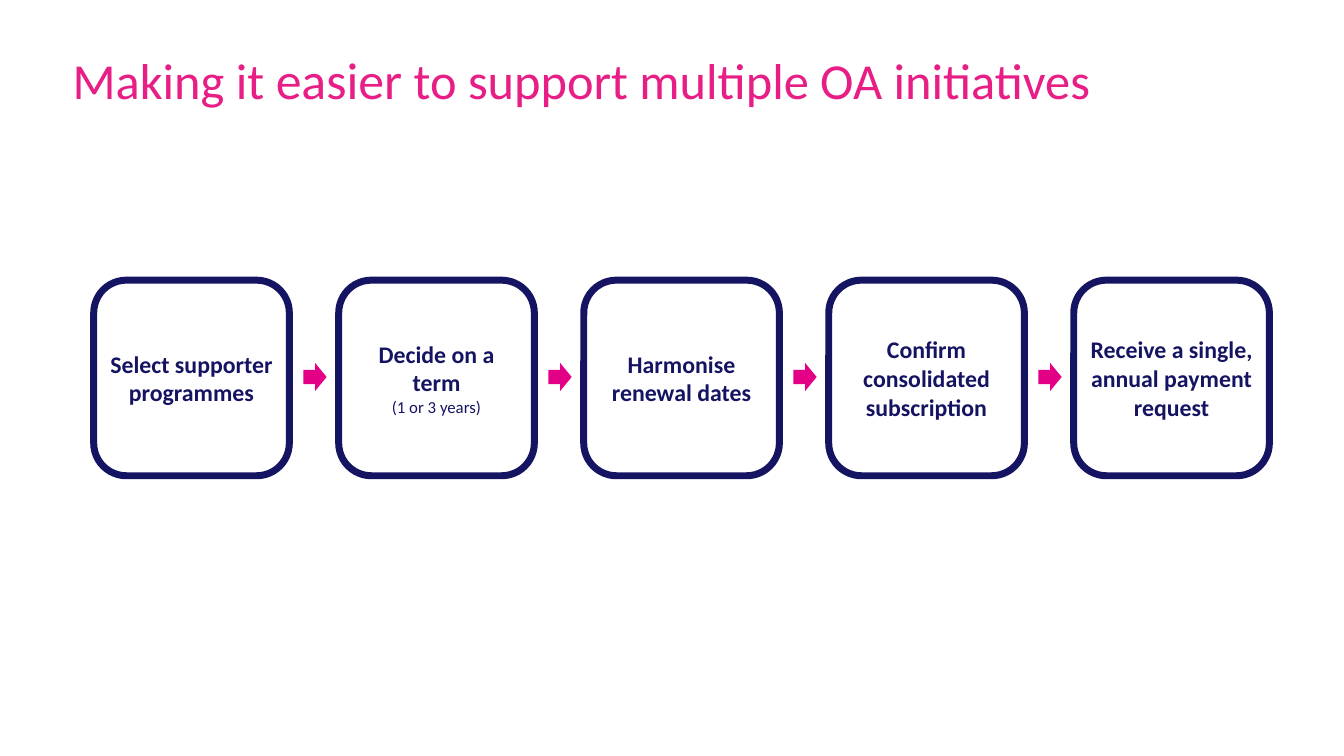
import pptx
import pptx.dml.color
import pptx.enum.shapes
import pptx.enum.text
import pptx.util

Inches = pptx.util.Inches
SHAPE = pptx.enum.shapes.MSO_SHAPE
ANCHOR = pptx.enum.text.MSO_ANCHOR
ALIGN = pptx.enum.text.PP_ALIGN

PINK, ARROW_PINK, NAVY = "E71E85", "E30086", "151462"
PITCH = 2.43
STEPS = [
    ("Select supporter programmes", None),
    ("Decide on a term", "(1 or 3 years)"),
    ("Harmonise renewal dates", None),
    ("Confirm consolidated subscription", None),
    ("Receive a single, annual payment request", None),
]


def rgb(color):
    """Turn a hex string into a colour."""
    return pptx.dml.color.RGBColor.from_string(color)


def add_text(p, text, size=17, color=NAVY, bold=False):
    """Append a formatted run to a paragraph."""
    r = p.add_run()
    r.text = text
    r.font.name = "Calibri"
    r.font.size = pptx.util.Pt(size)
    r.font.bold = bold
    r.font.color.rgb = rgb(color)


def set_title(slide):
    """Place and fill the title placeholder."""
    sp = slide.shapes.title
    sp.left, sp.top = Inches(0.62), Inches(0)
    sp.width, sp.height = Inches(12.06), Inches(1.15)
    tf = sp.text_frame
    tf.auto_size = pptx.enum.text.MSO_AUTO_SIZE.NONE
    tf.word_wrap = True
    tf.vertical_anchor = ANCHOR.BOTTOM
    p = tf.paragraphs[0]
    p.alignment = ALIGN.LEFT
    p.line_spacing = 0.9
    for text, size in (("Making it ", 36), ("easier", 37),
                       (" to support multiple OA initiatives", 36)):
        add_text(p, text, size=size, color=PINK)


def add_step(slide, x, label, note):
    """Add an outlined rounded box with a label and an optional note."""
    sp = slide.shapes.add_shape(SHAPE.ROUNDED_RECTANGLE, Inches(x), Inches(2.78),
                                Inches(1.94), Inches(1.94))
    sp.adjustments[0] = 0.167
    sp.shadow.inherit = False
    sp.fill.background()
    sp.line.color.rgb = rgb(NAVY)
    sp.line.width = pptx.util.Pt(5)
    tf = sp.text_frame
    tf.word_wrap = True
    tf.vertical_anchor = ANCHOR.MIDDLE
    tf.margin_left = tf.margin_right = Inches(0.04)
    tf.margin_top = tf.margin_bottom = Inches(0.04)
    p = tf.paragraphs[0]
    p.alignment = ALIGN.CENTER
    add_text(p, label, bold=True)
    if note:
        p.add_line_break()
        add_text(p, note, size=12)


def add_arrow(slide, x):
    """Add a small block arrow between two steps."""
    sp = slide.shapes.add_shape(SHAPE.RIGHT_ARROW, Inches(x), Inches(3.6),
                                Inches(0.23), Inches(0.28))
    sp.shadow.inherit = False
    sp.fill.solid()
    sp.fill.fore_color.rgb = rgb(ARROW_PINK)
    sp.line.fill.background()


def main():
    """Build the slide and save it."""
    prs = pptx.Presentation()
    prs.slide_width, prs.slide_height = Inches(13.33), Inches(7.5)
    slide = prs.slides.add_slide(prs.slide_layouts[5])
    set_title(slide)
    for i, (label, note) in enumerate(STEPS):
        add_step(slide, 0.93 + i * PITCH, label, note)
    for i in range(len(STEPS) - 1):
        add_arrow(slide, 3.01 + i * PITCH)
    prs.save("out.pptx")


if __name__ == "__main__":
    main()
